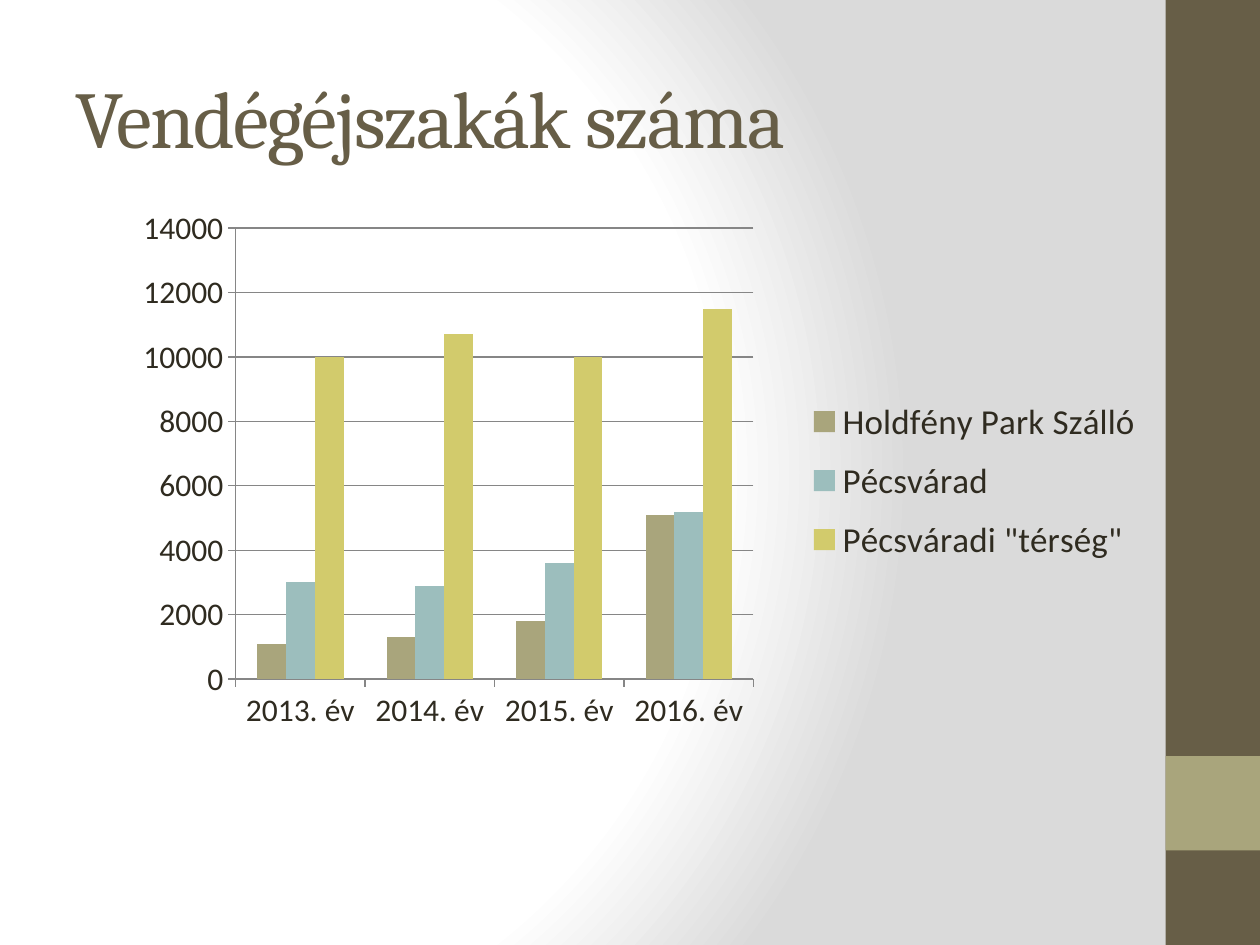
from dataclasses import dataclass

from pptx import Presentation
from pptx.chart.data import CategoryChartData
from pptx.dml.color import RGBColor
from pptx.enum.chart import XL_CHART_TYPE, XL_LEGEND_POSITION, XL_TICK_MARK
from pptx.enum.shapes import MSO_SHAPE
from pptx.enum.text import MSO_ANCHOR, PP_ALIGN
from pptx.oxml import parse_xml
from pptx.oxml.ns import nsdecls
from pptx.util import Inches, Pt


@dataclass(frozen=True)
class Theme:
    brown: str = "675E47"
    khaki: str = "A9A57C"
    teal: str = "9CBEBD"
    yellow: str = "D2CB6C"
    text: str = "2F2B20"
    grid: str = "868686"
    white: str = "FFFFFF"
    grey: str = "DADADA"
    title_font: str = "Cambria"
    body_font: str = "Calibri"
    title_size: int = 46
    axis_size: int = 18
    legend_size: int = 20


THEME = Theme()

YEARS = ["2013. év", "2014. év", "2015. év", "2016. év"]
GUEST_NIGHTS = [
    ("Holdfény Park Szálló", [1100, 1300, 1800, 5100], THEME.khaki),
    ("Pécsvárad", [3000, 2900, 3600, 5200], THEME.teal),
    ('Pécsváradi "térség"', [10000, 10700, 10000, 11500], THEME.yellow),
]


def color(value):
    return RGBColor.from_string(value)


def set_background(slide):
    """Fill the background with a radial gradient, white to grey."""
    stops = [(0, THEME.white), (75, THEME.white), (100, THEME.grey)]
    stop_xml = "".join(
        f'<a:gs pos="{position * 1000}"><a:srgbClr val="{value}"/></a:gs>'
        for position, value in stops
    )
    slide.background.fill.gradient()
    gradient = slide.element.cSld.bg.bgPr.find(
        "{http://schemas.openxmlformats.org/drawingml/2006/main}gradFill"
    )
    gradient.getparent().replace(gradient, parse_xml(
        f'<a:gradFill {nsdecls("a")} rotWithShape="1"><a:gsLst>{stop_xml}</a:gsLst>'
        '<a:path path="circle">'
        '<a:fillToRect l="20000" t="50000" r="100000" b="50000"/>'
        "</a:path></a:gradFill>"
    ))


def add_side_band(slide, left, top, width, height):
    """Draw the brown band with its square khaki block."""
    blocks = [
        (top, height, THEME.brown),
        (top + Inches(6), width, THEME.khaki),
    ]
    for block_top, block_height, fill in blocks:
        block = slide.shapes.add_shape(
            MSO_SHAPE.RECTANGLE, left, block_top, width, block_height
        )
        block.shadow.inherit = False
        block.fill.solid()
        block.fill.fore_color.rgb = color(fill)
        block.line.fill.background()


def place_title(slide, left, top, width, height):
    title = slide.shapes.title
    title.left, title.top, title.width, title.height = left, top, width, height
    frame = title.text_frame
    frame.text = "Vendégéjszakák száma"
    frame.vertical_anchor = MSO_ANCHOR.MIDDLE
    paragraph = frame.paragraphs[0]
    paragraph.alignment = PP_ALIGN.LEFT
    paragraph.font.name = THEME.title_font
    paragraph.font.size = Pt(THEME.title_size)
    paragraph.font.color.rgb = color(THEME.brown)
    paragraph.runs[0].font._element.set("spc", "-100")


def set_layout(element, index, frame, box, target=""):
    """Fix the box of a chart part, given in lengths from the chart's corner."""
    fractions = [
        length / frame[position % 2] for position, length in enumerate(box)
    ]
    sizes = "".join(
        f'<c:{name} val="{value:.4f}"/>' for name, value in zip("xywh", fractions)
    )
    for layout in element.xpath("c:layout"):
        element.remove(layout)
    element.insert(index, parse_xml(
        f'<c:layout {nsdecls("c")}><c:manualLayout>{target}'
        f'<c:xMode val="edge"/><c:yMode val="edge"/>{sizes}'
        "</c:manualLayout></c:layout>"
    ))


def add_guest_chart(slide, left, top, width, height):
    data = CategoryChartData()
    data.categories = YEARS
    for name, values, _ in GUEST_NIGHTS:
        data.add_series(name, values)
    chart = slide.shapes.add_chart(
        XL_CHART_TYPE.COLUMN_CLUSTERED, left, top, width, height, data
    ).chart
    chart.has_title = False
    chart.font.name = THEME.body_font
    chart.font.size = Pt(THEME.axis_size)
    chart.font.color.rgb = color(THEME.text)

    plot = chart.plots[0]
    plot.gap_width = 150
    plot.overlap = 0
    plot.vary_by_categories = False
    for series, (_, _, fill) in zip(plot.series, GUEST_NIGHTS):
        series.format.fill.solid()
        series.format.fill.fore_color.rgb = color(fill)

    value_axis = chart.value_axis
    value_axis.minimum_scale = 0
    value_axis.maximum_scale = 14000
    value_axis.major_unit = 2000
    value_axis.has_major_gridlines = True
    for axis in (chart.category_axis, value_axis):
        axis.major_tick_mark = XL_TICK_MARK.OUTSIDE
    for item in (chart.category_axis, value_axis, value_axis.major_gridlines):
        item.format.line.color.rgb = color(THEME.grid)
        item.format.line.width = Pt(0.75)

    chart.has_legend = True
    chart.legend.position = XL_LEGEND_POSITION.RIGHT
    chart.legend.include_in_layout = False
    chart.legend.font.size = Pt(THEME.legend_size)

    frame = (width, height)
    plot_box = (Inches(1.12), Inches(0.34), Inches(4.11), Inches(3.58))
    legend_box = (Inches(5.74), Inches(1.58), Inches(2.6), Inches(1.53))
    plot_area = chart._chartSpace.chart.plotArea
    set_layout(plot_area, 0, frame, plot_box, '<c:layoutTarget val="inner"/>')
    set_layout(chart.legend._element, 1, frame, legend_box)


def main():
    presentation = Presentation()
    presentation.slide_width = Inches(10)
    presentation.slide_height = Inches(7.5)
    slide = presentation.slides.add_slide(presentation.slide_layouts[5])
    set_background(slide)
    add_side_band(slide, Inches(9.25), Inches(0), Inches(0.75), Inches(7.5))
    add_guest_chart(slide, Inches(0.75), Inches(1.47), Inches(8.43), Inches(5.2))
    place_title(slide, Inches(0.5), Inches(0.3), Inches(8.33), Inches(1.25))
    presentation.save("out.pptx")


if __name__ == "__main__":
    main()
